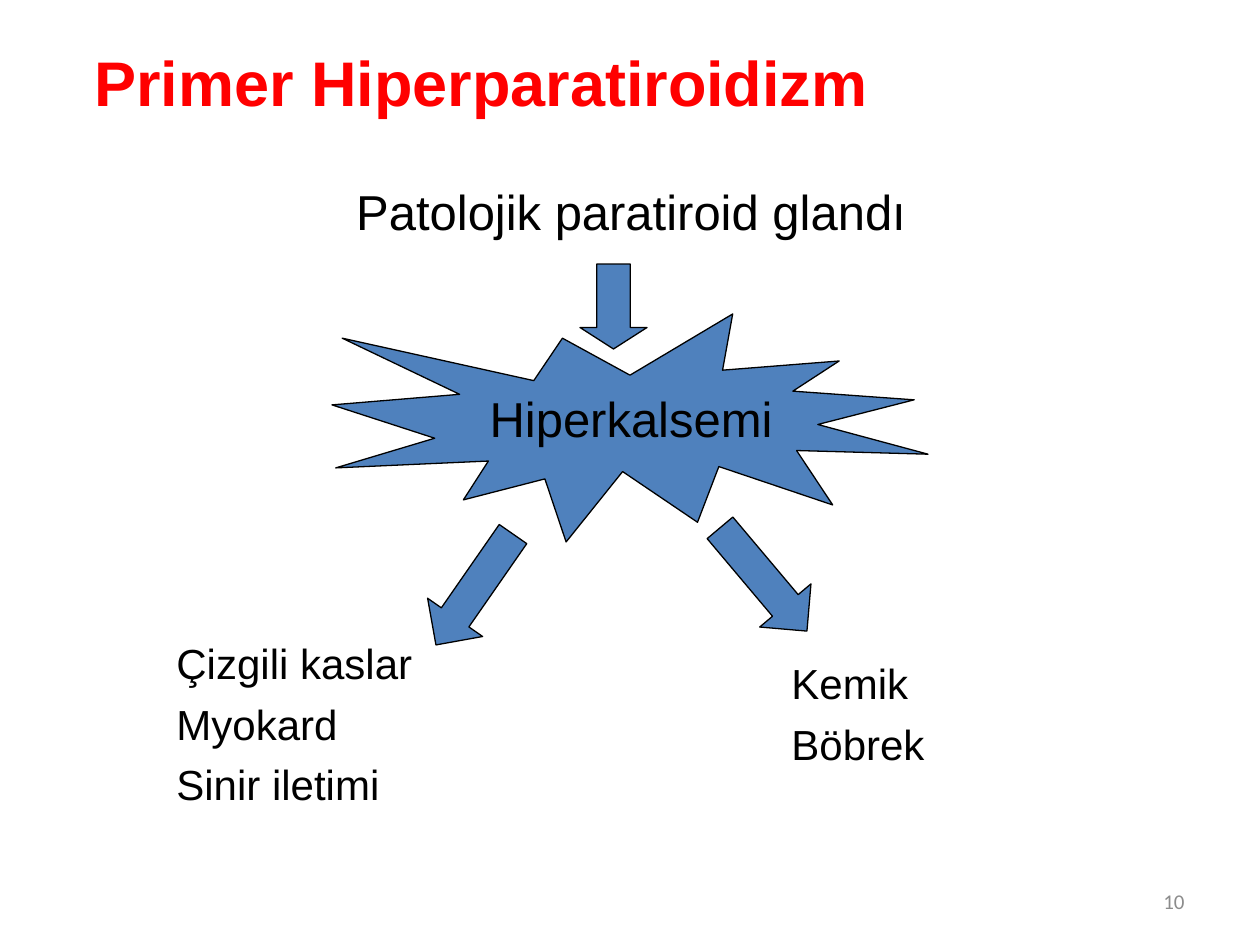
import dataclasses

import pptx
import pptx.dml.color
import pptx.enum.shapes
import pptx.enum.text
import pptx.util

PX = 914400 / 126
SHAPE = pptx.enum.shapes.MSO_SHAPE
ALIGN = pptx.enum.text.PP_ALIGN
ANCHOR = pptx.enum.text.MSO_ANCHOR


@dataclasses.dataclass(frozen=True)
class Style:
    """Type size, colour, typeface and weight of a run."""

    size: int
    color: str = "000000"
    font: str = "Arial"
    bold: bool = False


@dataclasses.dataclass(frozen=True)
class Theme:
    """Colours and type styles of the slide."""

    fill: str = "4F81BD"
    line: str = "000000"
    line_width: float = 0.75
    title: Style = Style(36, "FF0000", bold=True)
    stage: Style = Style(28)
    effect: Style = Style(24)
    number: Style = Style(12, "8C8C8C", "Calibri")


THEME = Theme()


def rgb(value):
    """Return a colour from its hex value."""
    return pptx.dml.color.RGBColor.from_string(value)


def place(*lengths):
    """Turn px lengths into EMU."""
    return [pptx.util.Emu(round(length * PX)) for length in lengths]


def add_text(page, frame, lines, style, align=ALIGN.LEFT, anchor=ANCHOR.TOP, gaps=None):
    """Add a text box with one paragraph per line and a gap before each."""
    box = page.shapes.add_textbox(*place(*frame)).text_frame
    box.word_wrap = True
    box.vertical_anchor = anchor
    for index, line in enumerate(lines):
        para = box.add_paragraph() if index else box.paragraphs[0]
        para.alignment = align
        para.space_before = pptx.util.Pt(gaps[index] if gaps else 0)
        span = para.add_run()
        span.text = line
        span.font.size = pptx.util.Pt(style.size)
        span.font.name = style.font
        span.font.bold = style.bold
        span.font.color.rgb = rgb(style.color)


def add_figure(page, kind, frame, rotation=0, adjustments=()):
    """Add a filled and outlined preset shape."""
    figure = page.shapes.add_shape(kind, *place(*frame))
    figure.shadow.inherit = False
    figure.rotation = rotation
    figure.fill.solid()
    figure.fill.fore_color.rgb = rgb(THEME.fill)
    figure.line.color.rgb = rgb(THEME.line)
    figure.line.width = pptx.util.Pt(THEME.line_width)
    for index, value in enumerate(adjustments):
        figure.adjustments[index] = value


def add_arrow(page, frame, head, rotation=0):
    """Add a block arrow that points down before it is turned."""
    add_figure(page, SHAPE.DOWN_ARROW, frame, rotation, (0.5, head))


def main():
    """Build the slide and save the deck."""
    deck = pptx.Presentation()
    deck.slide_width, deck.slide_height = place(1260, 945)
    page = deck.slides.add_slide(deck.slide_layouts[6])

    add_figure(page, SHAPE.EXPLOSION1, (332, 314, 596, 228))
    add_text(page, (82, 3, 1134, 157), ["Primer Hiperparatiroidizm"],
             THEME.title, anchor=ANCHOR.MIDDLE)
    add_text(page, (164, 631, 407, 242), ["Çizgili kaslar", "Myokard", "Sinir iletimi"],
             THEME.effect, gaps=(3, 6, 6))
    add_text(page, (779, 651, 437, 242), ["Kemik", "Böbrek"],
             THEME.effect, gaps=(3, 6))
    add_text(page, (64, 175, 1134, 301), ["Patolojik paratiroid glandı", "Hiperkalsemi"],
             THEME.stage, ALIGN.CENTER, gaps=(3, 85))

    add_arrow(page, (580, 264, 67, 85), 0.32)
    add_arrow(page, (441, 522, 67, 135), 0.5, 34.8)
    add_arrow(page, (730, 512, 67, 135), 0.5, 319.9)

    add_text(page, (903, 876, 294, 50), ["10"], THEME.number, ALIGN.RIGHT, ANCHOR.MIDDLE)
    deck.save("out.pptx")


if __name__ == "__main__":
    main()
